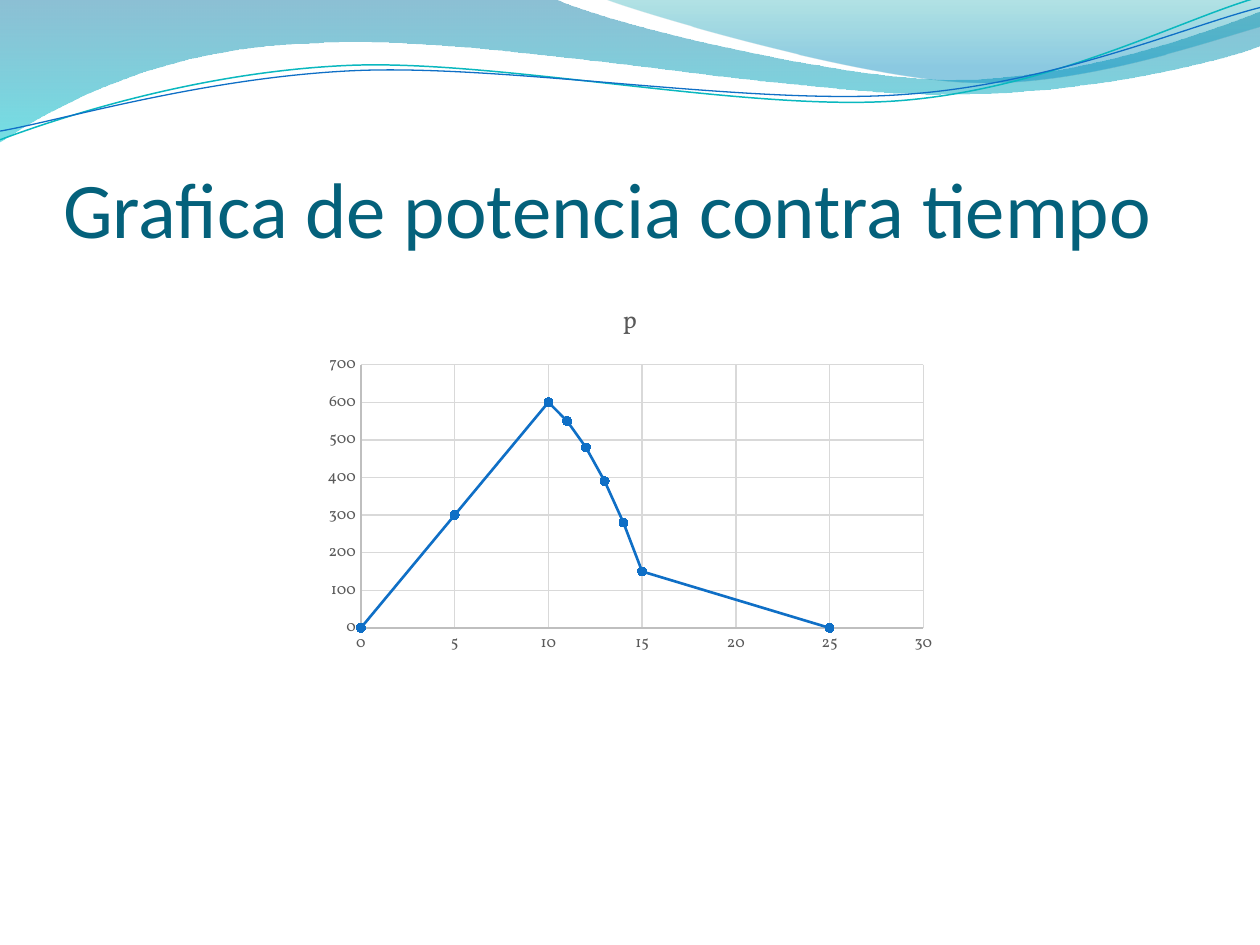
from lxml.etree import Element, SubElement
from pptx import Presentation
from pptx.chart.data import XyChartData
from pptx.dml.color import RGBColor
from pptx.enum.chart import XL_CHART_TYPE, XL_MARKER_STYLE, XL_TICK_MARK
from pptx.enum.text import MSO_ANCHOR, MSO_AUTO_SIZE, PP_ALIGN
from pptx.oxml.ns import qn
from pptx.util import Pt

BLUE, TEAL, GREY = "0F6FC6", "0AB8BF", "595959"
BODY_FONT = "Vollkorn"

UPPER_WAVE = [
    (0, 0), (316.8, -0.7),
    (342.7, 12.2, 478.1, 45.4, 545.8, 45.4), (614.2, 45.4, 689.8, 18.7, 720, 6.5),
    (720.7, 25.9),
    (707.8, 31.7, 626.4, 54.7, 537.1, 54), (447.8, 54, 275, 20.2, 185, 24.5),
    (92.9, 25.9, 33.1, 59.8, -0.7, 81.4),
]
RIGHT_WAVE = [
    (344.9, -0.7),
    (366.5, 7.9, 491, 44.6, 553.7, 46.8), (616.3, 49.7, 691.9, 23, 720, 15.1),
    (720, 0),
]
TEAL_LINE = [
    (0, 79.9),
    (34.6, 67, 113.8, 41, 199.4, 37.4), (284.4, 33.8, 427, 64.1, 513.4, 57.6),
    (599.8, 51.1, 675.4, 10.8, 718.6, -1.4),
]
BLUE_LINE = [
    (0, 74.9),
    (33.8, 69.1, 118.1, 43.9, 203.8, 40.3), (290.2, 36.7, 429.8, 60.5, 516.2, 54),
    (601.9, 48.2, 677.5, 15.1, 720, 4.3),
]
POWER_BY_TIME = [
    (0, 0), (5, 300), (10, 600), (11, 550), (12, 480),
    (13, 390), (14, 280), (15, 150), (25, 0),
]


def color(value):
    """Turn a hex string into a colour."""
    return RGBColor.from_string(value)


def format_font(font, size, hex_color, name):
    """Set the size, colour and typeface of a font."""
    font.size, font.name, font.bold = Pt(size), name, False
    font.color.rgb = color(hex_color)


def write_text(text_frame, text, *, size, hex_color, font_name, align):
    """Write one formatted paragraph."""
    paragraph = text_frame.paragraphs[0]
    paragraph.alignment = align
    run = paragraph.add_run()
    run.text = text
    format_font(run.font, size, hex_color, font_name)


def format_line(line, hex_color, width):
    """Give a line a solid colour and a width."""
    line.color.rgb = color(hex_color)
    line.width = Pt(width)


def add_outline(slide, box, outline, closed):
    """Draw straight and curved segments offset to the corner of a box."""
    left, top = box[:2]
    anchors = [(Pt(left + segment[-2]), Pt(top + segment[-1])) for segment in outline]
    builder = slide.shapes.build_freeform(*anchors[0])
    builder.add_line_segments(anchors[1:], close=closed)
    shape = builder.convert_to_shape()
    shape.shadow.inherit = False
    straight_segments = list(shape.element.iter(qn("a:lnTo")))
    for straight, segment in zip(straight_segments, outline[1:]):
        if len(segment) == 6:
            curve = Element(qn("a:cubicBezTo"))
            for x, y in zip(segment[::2], segment[1::2]):
                point = SubElement(curve, qn("a:pt"))
                point.set("x", str(Pt(left + x) - shape.left))
                point.set("y", str(Pt(top + y) - shape.top))
            straight.getparent().replace(straight, curve)
    return shape


def add_wave(slide, box, outline, stops):
    """Add a wave with a translucent vertical gradient."""
    shape = add_outline(slide, box, outline, True)
    shape.line.fill.background()
    shape.fill.gradient()
    shape.fill.gradient_angle = 270
    for stop, (position, hex_color, _) in zip(shape.fill.gradient_stops, stops):
        stop.position = position
        stop.color.rgb = color(hex_color)
    gradient = shape.element.spPr.find(qn("a:gradFill"))
    for element, (_, _, opacity) in zip(list(gradient.iter(qn("a:srgbClr"))), stops):
        SubElement(element, qn("a:alpha")).set("val", str(opacity * 1000))


def add_header(slide, box):
    """Add the waves and the two thin lines across the top."""
    add_wave(slide, box, UPPER_WAVE, [(0, "0074A1", 45), (1, "00C6CF", 55)])
    add_wave(slide, box, RIGHT_WAVE, [(0, "00A1A9", 30), (0.8, "008BBF", 45)])
    for outline, hex_color, width in ((TEAL_LINE, TEAL, 0.85), (BLUE_LINE, BLUE, 0.75)):
        shape = add_outline(slide, box, outline, False)
        shape.fill.background()
        format_line(shape.line, hex_color, width)


def add_title(slide, box, text):
    """Place and fill the title placeholder."""
    title = slide.shapes.title
    title.left, title.top, title.width, title.height = map(Pt, box)
    frame = title.text_frame
    frame.word_wrap, frame.auto_size = True, MSO_AUTO_SIZE.NONE
    frame.vertical_anchor = MSO_ANCHOR.BOTTOM
    frame.margin_left = frame.margin_right = frame.margin_bottom = 0
    frame.margin_top = Pt(3.6)
    write_text(frame, text, size=45, hex_color="04617B", font_name="Calibri",
               align=PP_ALIGN.LEFT)


def format_axis(axis, maximum, unit):
    """Set the scale, grid, line and labels of an axis."""
    axis.minimum_scale, axis.maximum_scale, axis.major_unit = 0, maximum, unit
    axis.major_tick_mark = axis.minor_tick_mark = XL_TICK_MARK.NONE
    axis.has_major_gridlines = True
    format_line(axis.major_gridlines.format.line, "D9D9D9", 0.75)
    format_line(axis.format.line, "BFBFBF", 0.75)
    format_font(axis.tick_labels.font, 9, GREY, BODY_FONT)


def add_power_chart(slide, box):
    """Add the scatter chart of power against time."""
    data = XyChartData()
    power = data.add_series("p")
    for time, value in POWER_BY_TIME:
        power.add_data_point(time, value)
    chart = slide.shapes.add_chart(
        XL_CHART_TYPE.XY_SCATTER_LINES, *map(Pt, box), data).chart
    format_font(chart.font, 10, "000000", BODY_FONT)
    chart.has_legend = False
    chart.has_title = True
    write_text(chart.chart_title.text_frame, "p", size=14, hex_color=GREY,
               font_name=BODY_FONT, align=PP_ALIGN.CENTER)
    chart.chart_title.include_in_layout = False
    format_axis(chart.category_axis, 30, 5)
    format_axis(chart.value_axis, 700, 100)
    plot = chart.plots[0]
    plot.vary_by_categories = False
    series = plot.series[0]
    series.smooth = False
    format_line(series.format.line, BLUE, 1.5)
    marker = series.marker
    marker.style, marker.size = XL_MARKER_STYLE.CIRCLE, 5
    marker.format.fill.solid()
    marker.format.fill.fore_color.rgb = color(BLUE)
    format_line(marker.format.line, BLUE, 0.75)


def main():
    """Build and save the slide."""
    presentation = Presentation()
    presentation.slide_width, presentation.slide_height = Pt(720), Pt(540)
    slide = presentation.slides.add_slide(presentation.slide_layouts[5])
    add_header(slide, (0, 0, 720, 82))
    add_title(slide, (36, 55.4, 653.8, 90), "Grafica de potencia contra tiempo")
    add_power_chart(slide, (180, 162, 360, 216))
    presentation.save("out.pptx")


if __name__ == "__main__":
    main()
